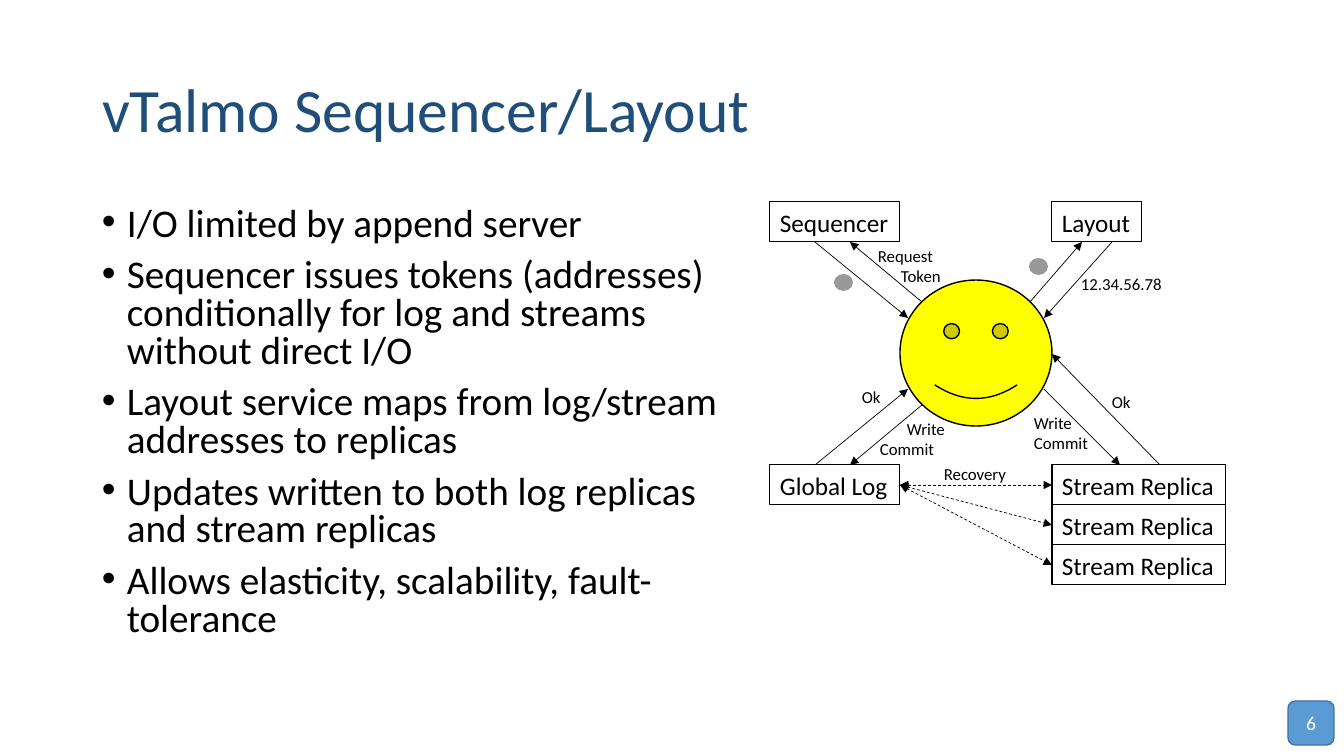
from lxml import etree
from pptx import Presentation, util as u
from pptx.dml.color import RGBColor
from pptx.enum import dml, shapes, text
from pptx.oxml.ns import qn

FONT = "Calibri"
COLORS = {"ink": "000000", "title": "1F4E79", "face": "FFFF00", "dot": "808080",
          "badge": "5B9BD5", "edge": "43739E", "white": "FFFFFF"}

TITLE = "vTalmo Sequencer/Layout"
BULLETS = [
    "I/O limited by append server",
    "Sequencer issues tokens (addresses) conditionally for log and streams without direct I/O",
    "Layout service maps from log/stream addresses to replicas",
    "Updates written to both log replicas and stream replicas",
    "Allows elasticity, scalability, fault-tolerance",
]
PAGE = "6"

# Diagram grid, in px
LEFT, RIGHT = 770, 1052
TOP, BOTTOM = 202, 465
BOX_H, REPLICAS = 40, 3
LOG_W, REPLICA_W = 130, 174
CLIENT = (900, 280, RIGHT - 900, 146)
DOTS = [(834, 274), (1029, 258)]

SERVICES = [("Sequencer", LEFT, TOP, LOG_W), ("Layout", RIGHT, TOP, 90),
            ("Global Log", LEFT, BOTTOM, LOG_W)]
SERVICES += [("Stream Replica", RIGHT, BOTTOM + row * BOX_H, REPLICA_W)
             for row in range(REPLICAS)]

MESSAGES = [  # start, end
    ((922, 302), (850, TOP + BOX_H)),
    ((815, TOP + BOX_H), (908, 318)),
    ((1030, 302), (1082, TOP + BOX_H)),
    ((1112, TOP + BOX_H), (1044, 318)),
    ((922, 405), (850, BOTTOM)),
    ((815, BOTTOM), (908, 389)),
    ((1044, 389), (1120, BOTTOM)),
    ((1160, BOTTOM), (RIGHT, 354)),
]
LABELS = [  # box, then (line, indent) pairs
    ((868, 241, 84, 50), [("Request", 0), ("Token", 23)]),
    ((1071, 269, 103, 30), [("12.34.56.78", 0)]),
    ((1024, 408, 76, 50), [("Write", 0), ("Commit", 0)]),
    ((870, 414, 86, 50), [("Write", 27), ("Commit", 0)]),
    ((934, 459, 84, 30), [("Recovery", 0)]),
    ((1102, 387, 45, 30), [("Ok", 0)]),
    ((852, 382, 45, 30), [("Ok", 0)]),
]


def px(n):
    return u.Emu(round(n * 914400 / 100.8))


def rgb(name):
    return RGBColor.from_string(COLORS[name])


def write(paragraph, words, size, color="ink"):
    run = paragraph.add_run()
    run.text = words
    run.font.size = u.Pt(size)
    run.font.name = FONT
    run.font.color.rgb = rgb(color)


def indent(paragraph, left, first=0):
    props = paragraph._p.get_or_add_pPr()
    props.set("marL", str(px(left)))
    props.set("indent", str(px(first)))
    return props


def next_paragraph(frame, index):
    return frame.paragraphs[0] if index == 0 else frame.add_paragraph()


def add_outline(slide, kind, box, fill=None, line="ink", width=0.75):
    shape = slide.shapes.add_shape(kind, *map(px, box))
    shape.shadow.inherit = False
    if fill:
        shape.fill.solid()
        shape.fill.fore_color.rgb = rgb(fill)
    else:
        shape.fill.background()
    if line:
        shape.line.color.rgb = rgb(line)
        shape.line.width = u.Pt(width)
    else:
        shape.line.fill.background()
    return shape


def add_arrow(slide, start, end, both_ways=False):
    arrow = slide.shapes.add_connector(
        shapes.MSO_CONNECTOR.STRAIGHT, *map(px, start + end))
    arrow.line.color.rgb = rgb("ink")
    arrow.line.width = u.Pt(0.5)
    if both_ways:
        arrow.line.dash_style = dml.MSO_LINE.DASH
    ln = arrow.line._get_or_add_ln()
    for tip in (["a:headEnd"] if both_ways else []) + ["a:tailEnd"]:
        etree.SubElement(ln, qn(tip), type="triangle")
    etree.SubElement(arrow._element.spPr, qn("a:effectLst"))


def add_title(slide):
    title = slide.shapes.title
    title.left, title.top, title.width, title.height = map(px, (92, 40, 1159, 146))
    frame = title.text_frame
    frame.auto_size = text.MSO_AUTO_SIZE.NONE
    frame.vertical_anchor = text.MSO_ANCHOR.MIDDLE
    heading = frame.paragraphs[0]
    heading.alignment = text.PP_ALIGN.LEFT
    heading.line_spacing = 0.9
    write(heading, TITLE, 44, "title")


def add_bullets(slide):
    frame = slide.shapes.add_textbox(*map(px, (92, 202, 647, 480))).text_frame
    frame.word_wrap = True
    for index, point in enumerate(BULLETS):
        paragraph = next_paragraph(frame, index)
        paragraph.line_spacing = 0.8
        paragraph.space_before = u.Pt(10)
        props = indent(paragraph, 25, -25)
        etree.SubElement(props, qn("a:buFont"), typeface="Arial")
        etree.SubElement(props, qn("a:buChar"), char="•")
        write(paragraph, point, 28)


def add_diagram(slide):
    kinds = shapes.MSO_SHAPE
    add_outline(slide, kinds.SMILEY_FACE, CLIENT, "face", width=1)
    for name, left, top, width in SERVICES:
        frame = add_outline(slide, kinds.RECTANGLE, (left, top, width, BOX_H)).text_frame
        frame.margin_right = 0
        frame.vertical_anchor = text.MSO_ANCHOR.TOP
        frame.paragraphs[0].alignment = text.PP_ALIGN.LEFT
        write(frame.paragraphs[0], name, 18)
    for start, end in MESSAGES:
        add_arrow(slide, start, end)
    middle = BOTTOM + BOX_H // 2
    for row in range(REPLICAS):
        add_arrow(slide, (LEFT + LOG_W, middle), (RIGHT, middle + row * BOX_H), True)
    for left, top in DOTS:
        dot = add_outline(slide, kinds.OVAL, (left, top, 19, 17), "dot", None)
        tint = dot._element.spPr.find(".//" + qn("a:srgbClr"))
        etree.SubElement(tint, qn("a:alpha"), val="80000")
    for box, lines in LABELS:
        frame = slide.shapes.add_textbox(*map(px, box)).text_frame
        frame.word_wrap = True
        frame.margin_right = 0
        for index, (words, left) in enumerate(lines):
            paragraph = next_paragraph(frame, index)
            indent(paragraph, left)
            write(paragraph, words, 12)


def add_page_badge(slide):
    badge = add_outline(slide, shapes.MSO_SHAPE.ROUNDED_RECTANGLE,
                        (1288, 701, 46, 44), "badge", "edge", 1)
    badge.text_frame.vertical_anchor = text.MSO_ANCHOR.MIDDLE
    badge.text_frame.paragraphs[0].alignment = text.PP_ALIGN.CENTER
    write(badge.text_frame.paragraphs[0], PAGE, 14, "white")


def main():
    deck = Presentation()
    deck.slide_width, deck.slide_height = px(1344), px(756)
    slide = deck.slides.add_slide(deck.slide_layouts[5])
    add_title(slide)
    add_bullets(slide)
    add_diagram(slide)
    add_page_badge(slide)
    deck.save("out.pptx")


if __name__ == "__main__":
    main()
